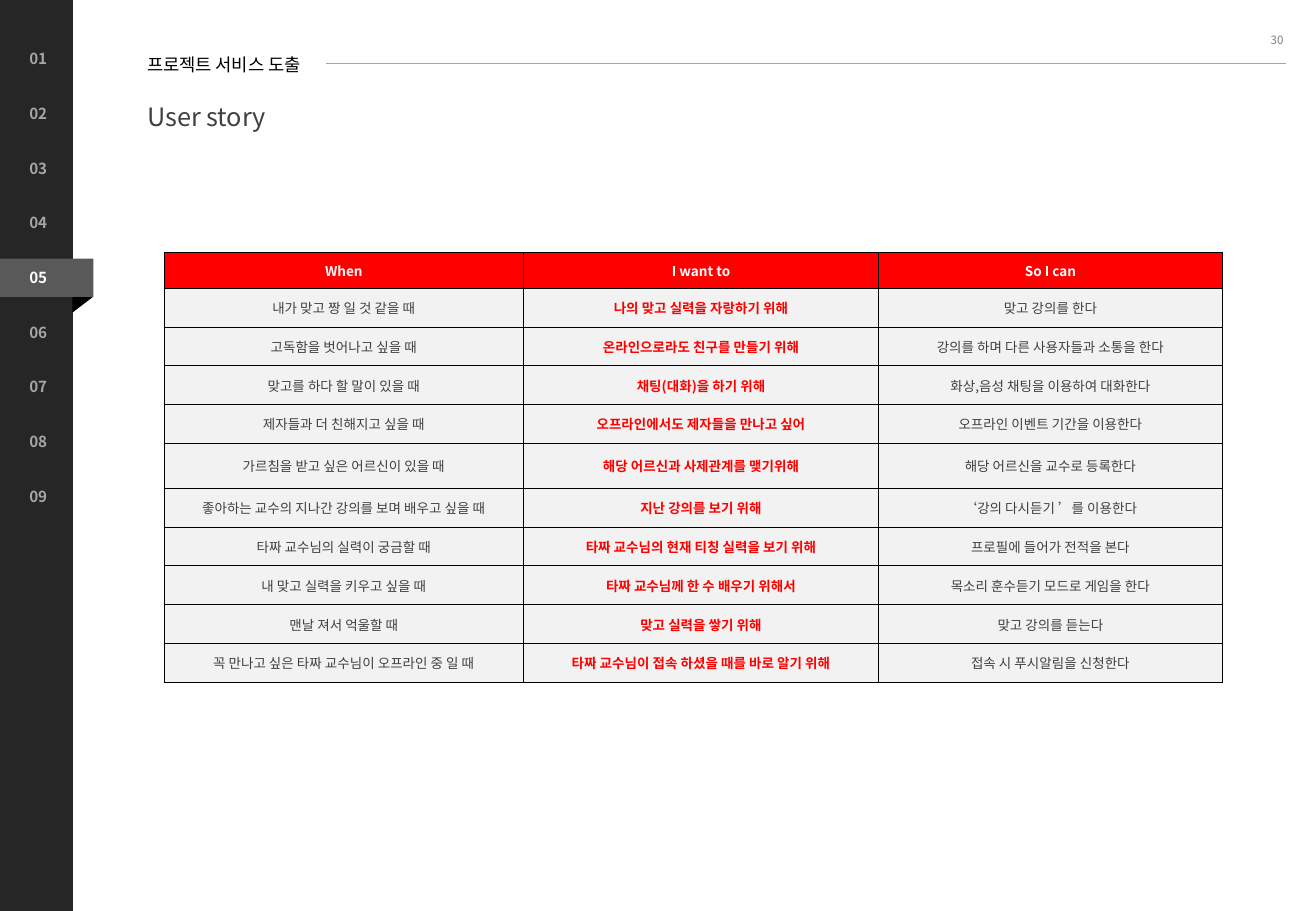
"""Build the user story slide: numbered sidebar, headings and a story table."""
from lxml.etree import SubElement
from pptx import Presentation
from pptx.dml.color import RGBColor
from pptx.enum.shapes import MSO_CONNECTOR, MSO_SHAPE
from pptx.enum.text import MSO_ANCHOR, MSO_AUTO_SIZE, PP_ALIGN
from pptx.oxml import parse_xml
from pptx.oxml.ns import nsdecls, qn
from pptx.util import Inches, Pt

FONT = "Noto Sans CJK KR"
COLORS = {
    "sidebar": "262626", "ribbon": "595959", "black": "000000", "white": "FFFFFF",
    "muted": "A6A6A6", "page": "808080", "text": "404040", "accent": "FF0000",
    "cell": "F2F2F2",
}
GRID_STEP = 0.15
ROW_COUNT = 50
CHAPTER_COUNT = 9
CURRENT_CHAPTER = 5
CHAPTER_PITCH = 3
CELL_INSETS = (0.07, 0.04)
TABLE_COLUMNS = (19.73, 19.47, 18.87)
HEADER_HEIGHT, STORY_HEIGHT, TALL_HEIGHT = 1.95, 2.13, 2.47
TALL_ROW = 5
STORIES = [
    ("When", "I want to", "So I can"),
    ("내가 맞고 짱 일 것 같을 때", "나의 맞고 실력을 자랑하기 위해", "맞고 강의를 한다"),
    ("고독함을 벗어나고 싶을 때", "온라인으로라도 친구를 만들기 위해", "강의를 하며 다른 사용자들과 소통을 한다"),
    ("맞고를 하다 할 말이 있을 때", "채팅(대화)을 하기 위해", "화상,음성 채팅을 이용하여 대화한다"),
    ("제자들과 더 친해지고 싶을 때", "오프라인에서도 제자들을 만나고 싶어", "오프라인 이벤트 기간을 이용한다"),
    ("가르침을 받고 싶은 어르신이 있을 때", "해당 어르신과 사제관계를 맺기위해", "해당 어르신을 교수로 등록한다"),
    ("좋아하는 교수의 지나간 강의를 보며 배우고 싶을 때", "지난 강의를 보기 위해", "‘강의 다시듣기 ’를 이용한다"),
    ("타짜 교수님의 실력이 궁금할 때", "타짜 교수님의 현재 티칭 실력을 보기 위해", "프로필에 들어가 전적을 본다"),
    ("내 맞고 실력을 키우고 싶을 때", "타짜 교수님께 한 수 배우기 위해서", "목소리 훈수듣기 모드로 게임을 한다"),
    ("맨날 져서 억울할 때", "맞고 실력을 쌓기 위해", "맞고 강의를 듣는다"),
    ("꼭 만나고 싶은 타짜 교수님이 오프라인 중 일 때", "타짜 교수님이 접속 하셨을 때를 바로 알기 위해", "접속 시 푸시알림을 신청한다"),
]


def grid(*steps):
    """Turn grid steps into lengths."""
    return [Inches(step * GRID_STEP) for step in steps]


def color(name):
    """Look up a named colour."""
    return RGBColor.from_string(COLORS[name])


def add_run(paragraph, text, size, color_name, bold=False):
    """Add one formatted run with the same Latin and East Asian font."""
    run = paragraph.add_run()
    run.text = text
    run.font.size = Pt(size)
    run.font.bold = bold
    run.font.name = FONT
    run.font.color.rgb = color(color_name)
    latin = run.font._element.find(qn("a:latin"))
    latin.addnext(parse_xml(f'<a:ea {nsdecls("a")} typeface="{FONT}"/>'))


def set_insets(target, horizontal, vertical):
    """Set the four margins of a text frame or a cell."""
    target.margin_left = target.margin_right = Inches(horizontal)
    target.margin_top = target.margin_bottom = Inches(vertical)


def add_label(slide, box, text, size, color_name, bold=False, insets=(0.1, 0.05)):
    """Add a one-line text box and return its frame."""
    frame = slide.shapes.add_textbox(*grid(*box)).text_frame
    frame.word_wrap = True
    set_insets(frame, *insets)
    add_run(frame.paragraphs[0], text, size, color_name, bold)
    return frame


def add_block(slide, preset, box, color_name, rotation=0):
    """Add a plain filled shape."""
    shape = slide.shapes.add_shape(preset, *grid(*box))
    shape.shadow.inherit = False
    shape.fill.solid()
    shape.fill.fore_color.rgb = color(color_name)
    shape.line.fill.background()
    shape.rotation = rotation


def add_sidebar(slide):
    """Add the chapter numbers with the current one on a folded ribbon."""
    add_block(slide, MSO_SHAPE.RECTANGLE, (0, 0, 4, ROW_COUNT), "sidebar")
    add_block(slide, MSO_SHAPE.ISOSCELES_TRIANGLE, (3.67, 15.73, 1.73, 1.13), "black", 90)
    add_block(slide, MSO_SHAPE.RECTANGLE, (0, 14.2, 5.13, 2.1), "ribbon")
    for chapter in range(1, CHAPTER_COUNT + 1):
        top = 2.4 + CHAPTER_PITCH * (chapter - 1)
        color_name = "white" if chapter == CURRENT_CHAPTER else "muted"
        add_label(slide, (0.95, top, 3.4, 1.67), f"{chapter:02d}", 9, color_name, True)


def set_title(slide, box, text):
    """Place and format the title placeholder."""
    title = slide.shapes.title
    title.left, title.top, title.width, title.height = grid(*box)
    frame = title.text_frame
    frame.auto_size = MSO_AUTO_SIZE.NONE
    frame.word_wrap = False
    frame.vertical_anchor = MSO_ANCHOR.TOP
    set_insets(frame, 0, 0)
    paragraph = frame.paragraphs[0]
    paragraph.alignment = PP_ALIGN.LEFT
    paragraph.line_spacing = Pt(23.2)
    add_run(paragraph, text, 15, "text")


def add_rule(slide, left, right, top):
    """Add a thin horizontal line."""
    line = slide.shapes.add_connector(MSO_CONNECTOR.STRAIGHT, *grid(left, top, right, top))
    line.line.color.rgb = color("muted")
    line.line.width = Pt(0.5)
    SubElement(line._element.spPr, qn("a:effectLst"))


def set_borders(cell):
    """Draw a thin black line on each side of a cell."""
    properties = cell._tc.get_or_add_tcPr()
    for index, side in enumerate(("lnL", "lnR", "lnT", "lnB")):
        properties.insert(index, parse_xml(
            f'<a:{side} {nsdecls("a")} w="{Pt(0.5)}"><a:solidFill>'
            f'<a:srgbClr val="{COLORS["black"]}"/></a:solidFill></a:{side}>'))


def fill_cell(cell, text, fill_name, color_name, bold):
    """Write and format one table cell."""
    cell.fill.solid()
    cell.fill.fore_color.rgb = color(fill_name)
    cell.vertical_anchor = MSO_ANCHOR.MIDDLE
    set_insets(cell, *CELL_INSETS)
    set_borders(cell)
    paragraph = cell.text_frame.paragraphs[0]
    paragraph.alignment = PP_ALIGN.CENTER
    add_run(paragraph, text, 8, color_name, bold)


def add_story_table(slide, left, top):
    """Add the table of user stories."""
    heights = [STORY_HEIGHT] * len(STORIES)
    heights[0], heights[TALL_ROW] = HEADER_HEIGHT, TALL_HEIGHT
    box = grid(left, top, sum(TABLE_COLUMNS), sum(heights))
    table = slide.shapes.add_table(len(STORIES), len(TABLE_COLUMNS), *box).table
    for column, width in zip(table.columns, grid(*TABLE_COLUMNS)):
        column.width = width
    for row, height in zip(table.rows, grid(*heights)):
        row.height = height
    for row_index, story in enumerate(STORIES):
        for column_index, text in enumerate(story):
            if row_index == 0:
                style = ("accent", "white", True)
            elif column_index == 1:
                style = ("cell", "accent", True)
            else:
                style = ("cell", "text", False)
            fill_cell(table.cell(row_index, column_index), text, *style)


def main():
    """Build and save the slide."""
    presentation = Presentation()
    presentation.slide_width = Inches(10.83)
    presentation.slide_height = Inches(ROW_COUNT * GRID_STEP)
    slide = presentation.slides.add_slide(presentation.slide_layouts[5])
    add_sidebar(slide)
    page = add_label(slide, (54.8, 0.87, 16.27, 2.67), "30", 6.8, "page")
    page.vertical_anchor = MSO_ANCHOR.MIDDLE
    page.paragraphs[0].alignment = PP_ALIGN.RIGHT
    add_story_table(slide, 9, 13.87)
    section = add_label(slide, (7.6, 2.8, 10.87, 1.6), "프로젝트 서비스 도출", 10.5, "black",
                        insets=CELL_INSETS)
    section.paragraphs[0].line_spacing = 0.9
    set_title(slide, (8.07, 5.07, 7.4, 2.13), "User story")
    add_rule(slide, 17.87, 70.53, 3.5)
    presentation.save("out.pptx")


if __name__ == "__main__":
    main()
